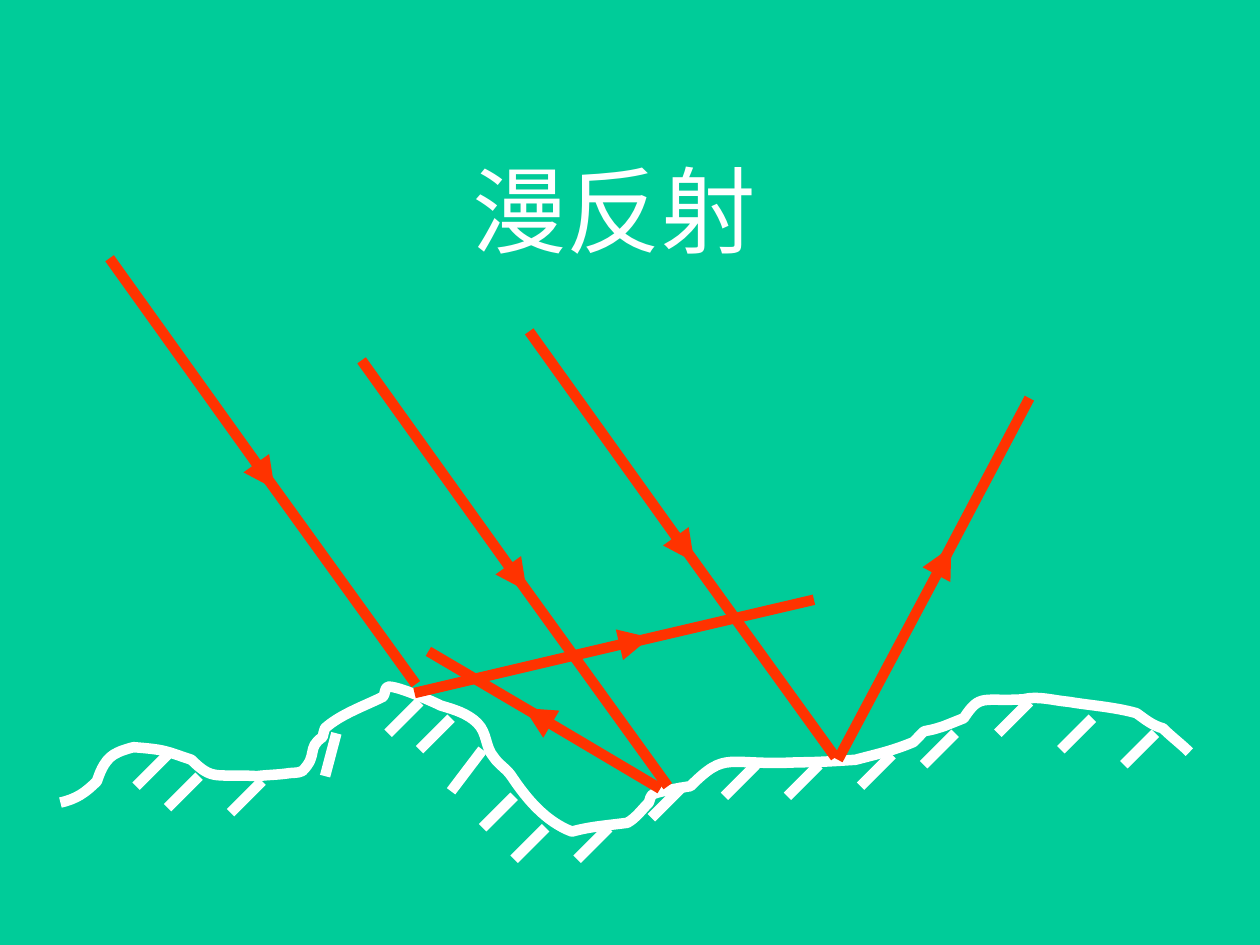
from lxml import etree
from pptx import Presentation
from pptx.dml.color import RGBColor
from pptx.enum.shapes import MSO_CONNECTOR
from pptx.oxml.ns import qn
from pptx.util import Inches, Pt

STRAIGHT = MSO_CONNECTOR.STRAIGHT
GREEN = RGBColor(0x00, 0xCC, 0x99)
WHITE = RGBColor(0xFF, 0xFF, 0xFF)
RED = RGBColor(0xFF, 0x33, 0x00)
FONT = "Times New Roman"
WIDTH = Pt(6)

START = (0, 0.93)
CURVES = [
    ((0.13, 0.9), (0.2, 0.85), (0.29, 0.76)),
    ((0.32, 0.67), (0.36, 0.57), (0.46, 0.53)),
    ((0.5, 0.51), (0.58, 0.49), (0.58, 0.49)),
    ((0.84, 0.51), (0.83, 0.52), (1.04, 0.59)),
    ((1.21, 0.76), (1.23, 0.7), (1.56, 0.72)),
    ((1.64, 0.71), (1.71, 0.71), (1.79, 0.7)),
    ((1.83, 0.69), (1.88, 0.7), (1.92, 0.68)),
    ((2.05, 0.55), (1.95, 0.5), (2.08, 0.41)),
    ((2.09, 0.38), (2.09, 0.36), (2.1, 0.34)),
    ((2.22, 0.23), (2.42, 0.16), (2.56, 0.09)),
    ((2.58, 0.07), (2.57, 0.02), (2.6, 0.01)),
    ((2.67, 0), (2.96, 0.13), (3.02, 0.16)),
    ((3.12, 0.19), (3.23, 0.22), (3.31, 0.3)),
    ((3.39, 0.38), (3.37, 0.49), (3.44, 0.57)),
    ((3.48, 0.63), (3.54, 0.66), (3.58, 0.72)),
    ((3.7, 0.9), (3.85, 1.08), (4.06, 1.16)),
    ((4.2, 1.12), (4.35, 1.11), (4.5, 1.09)),
    ((4.57, 1.05), (4.61, 0.99), (4.67, 0.93)),
    ((4.68, 0.91), (4.68, 0.87), (4.71, 0.86)),
    ((4.76, 0.84), (4.93, 0.81), (5, 0.8)),
    ((5.29, 0.51), (5.28, 0.64), (5.85, 0.61)),
    ((6.01, 0.61), (6.16, 0.6), (6.31, 0.59)),
    ((6.5, 0.54), (6.6, 0.52), (6.77, 0.45)),
    ((6.91, 0.31), (6.79, 0.4), (7.02, 0.32)),
    ((7.07, 0.3), (7.12, 0.28), (7.17, 0.26)),
    ((7.3, 0.06), (7.32, 0.13), (7.64, 0.11)),
    ((7.76, 0.08), (7.88, 0.12), (8, 0.13)),
    ((8.18, 0.16), (8.36, 0.17), (8.54, 0.22)),
    ((8.61, 0.27), (8.67, 0.32), (8.75, 0.34)),
    ((8.82, 0.41), (8.89, 0.46), (8.96, 0.53)),
]
SLANT = (-0.25, 0.25)
TICKS = [(spot, SLANT) for spot in [
    (8.69, 0.38), (7.1, 0.38), (7.69, 0.13), (8.19, 0.26),
    (4.94, 0.8), (5.52, 0.63), (6.02, 0.63), (6.6, 0.55),
    (3.6, 0.88), (3.85, 1.13), (4.35, 1.13), (2.85, 0.13),
    (3.1, 0.26), (0.85, 0.55), (1.1, 0.72), (1.6, 0.76),
]] + [((3.35, 0.51), (-0.25, 0.33)), ((2.19, 0.38), (-0.09, 0.34))]

BEAM = [(0, 0), (1.31, 1.83), (1.16, 1.62), (2.43, 3.38)]
BEAMS = [(0, 0), (2, 0.81), (3.33, 0.58)]
BOUNCES = [
    [(1.95, 1.5), (0.87, 0.86), (1.01, 0.94), (0.11, 0.41)],
    [(0, 0.74), (1.87, 0.3), (1.63, 0.36), (3.17, 0)],
    [(3.36, 1.27), (4.26, -0.42), (4.14, -0.2), (4.88, -1.6)],
]


def shift(point, base):
    return point[0] + base[0], point[1] + base[1]


def place(point, base):
    return tuple(Inches(v) for v in shift(point, base))


def add_line(group, start, end, color, arrow=False):
    ends = [Inches(v) for v in (*start, *end)]
    line = group.shapes.add_connector(STRAIGHT, *ends)
    line.line.color.rgb = color
    line.line.width = WIDTH
    props = line._element.spPr
    if arrow:
        etree.SubElement(props.find(qn("a:ln")), qn("a:tailEnd"), type="triangle")
    etree.SubElement(props, qn("a:effectLst"))


def add_text(slide, text, box, *, size, color, font):
    shape = slide.shapes.add_textbox(*[Inches(v) for v in box])
    frame = shape.text_frame
    frame.word_wrap = True
    run = frame.paragraphs[0].add_run()
    run.text = text
    run.font.size = Pt(size)
    run.font.name = font
    run.font.color.rgb = color


def add_curve(group, base):
    pen = group.shapes.build_freeform(*place(START, base))
    pen.add_line_segments([place(c[-1], base) for c in CURVES], close=False)
    ridge = pen.convert_to_shape()
    left, top = ridge.left, ridge.top
    parts = list(ridge._element.iter(qn("a:lnTo")))
    for part, curve in zip(parts, CURVES):
        bend = etree.Element(qn("a:cubicBezTo"))
        for point in curve:
            x, y = place(point, base)
            etree.SubElement(bend, qn("a:pt"), x=str(x - left), y=str(y - top))
        part.getparent().replace(part, bend)
    ridge.shadow.inherit = False
    ridge.fill.background()
    ridge.line.color.rgb = WHITE
    ridge.line.width = WIDTH


def draw_ground(slide, base):
    group = slide.shapes.add_group_shape()
    add_curve(group, base)
    for spot, slant in TICKS:
        top = shift(spot, base)
        add_line(group, top, shift(top, slant), WHITE)


def draw_rays(slide, base, rays):
    group = slide.shapes.add_group_shape()
    for ray in rays:
        first, tip, join, last = [shift(p, base) for p in ray]
        add_line(group, first, tip, RED, arrow=True)
        add_line(group, join, last, RED)


def main():
    deck = Presentation()
    deck.slide_width = Inches(10)
    deck.slide_height = Inches(7.5)
    slide = deck.slides.add_slide(deck.slide_layouts[6])
    back = slide.background.fill
    back.solid()
    back.fore_color.rgb = GREEN
    draw_ground(slide, (0.48, 5.44))
    beams = [[shift(p, spot) for p in BEAM] for spot in BEAMS]
    draw_rays(slide, (0.87, 2.05), beams)
    draw_rays(slide, (3.29, 4.76), BOUNCES)
    add_text(slide, "漫反射", (3.65, 1.16, 2.6, 1), size=54, color=WHITE, font=FONT)
    deck.save("out.pptx")


if __name__ == "__main__":
    main()
